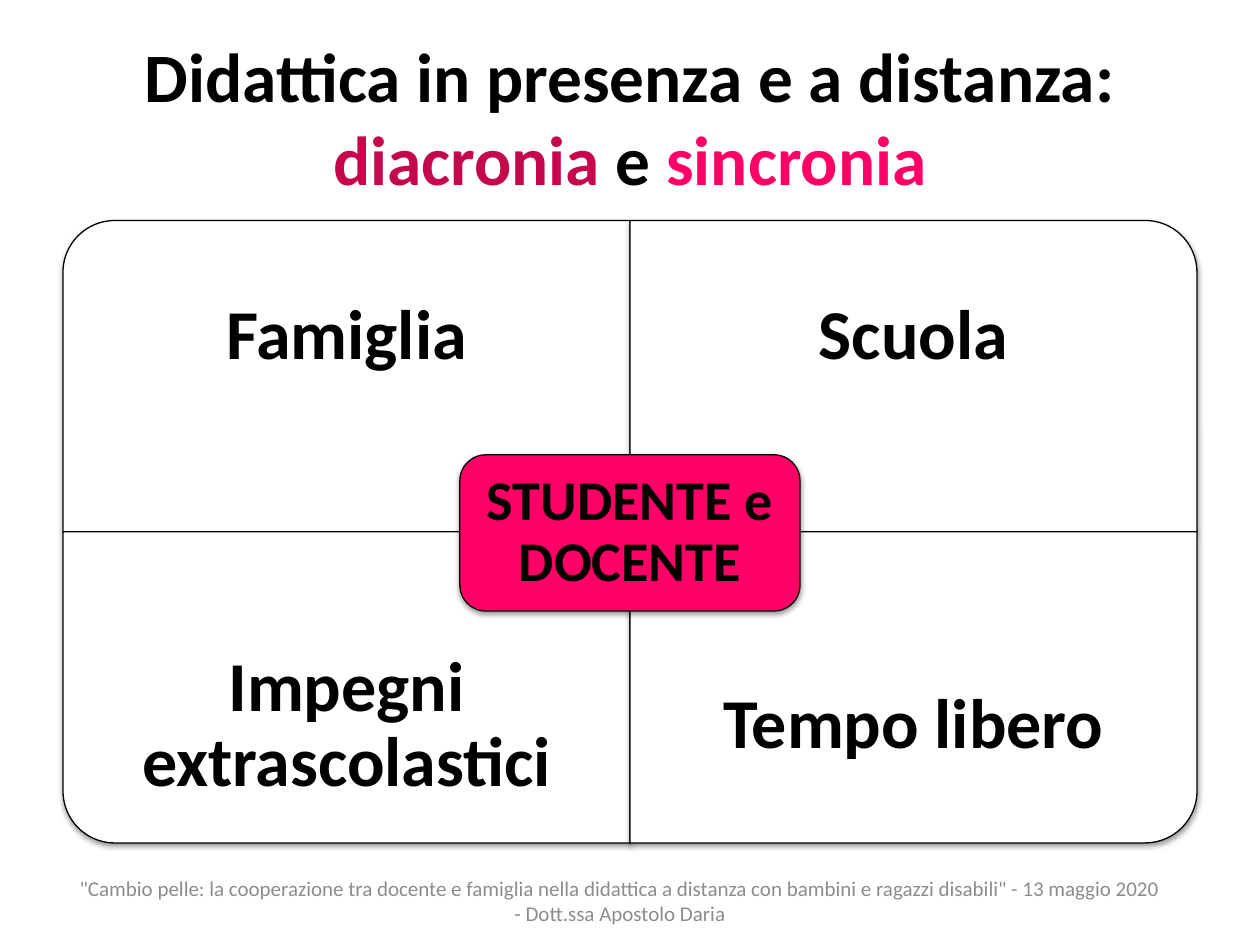
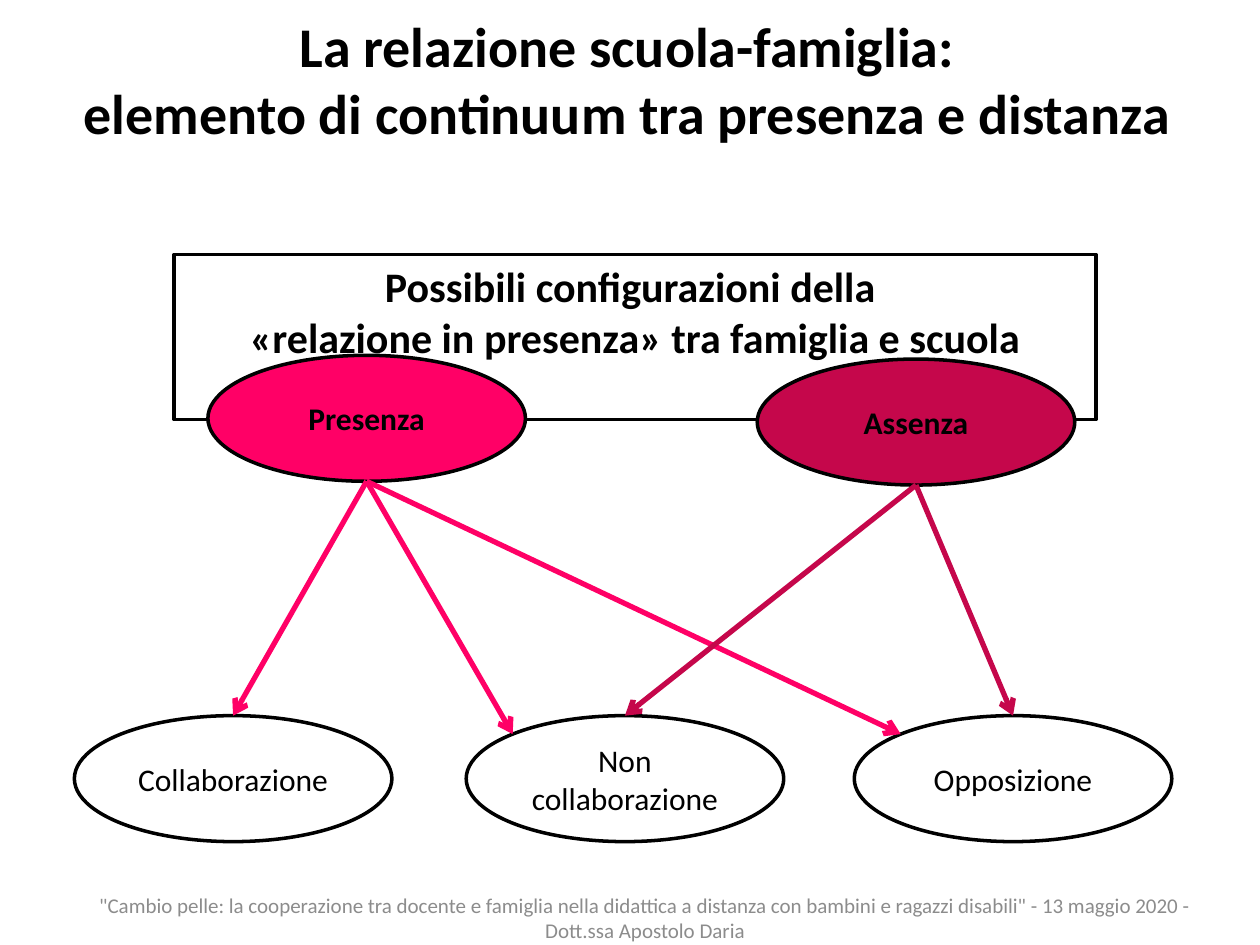
from math import cos, pi

from lxml.etree import SubElement
from pptx import Presentation
from pptx.dml.color import RGBColor
from pptx.enum.shapes import MSO_CONNECTOR, MSO_SHAPE
from pptx.enum.text import MSO_ANCHOR, PP_ALIGN
from pptx.oxml.ns import qn
from pptx.util import Inches, Pt

BLACK, WHITE, GREY = "000000", "FFFFFF", "8C8C8C"
PINK, CRIMSON = "FF0066", "C5074B"
FONT = "Calibri"
FOOTER = ('"Cambio pelle: la cooperazione tra docente e famiglia nella didattica a distanza '
          'con bambini e ragazzi disabili" - 13 maggio 2020 - Dott.ssa Apostolo Daria')

TITLE = {"size": Pt(39.6), "bold": True}
SUBTITLE = {"size": Pt(32), "bold": True}
QUADRANT = {"size": Pt(40), "bold": True}
HEADING = {"size": Pt(24), "bold": True}
CAUSE = {"size": Pt(18), "bold": True}
OUTCOME = {"size": Pt(18), "bold": False}
SMALL = {"size": Pt(12), "bold": False}


def rgb(color):
    return RGBColor.from_string(color)


def write(sp, paragraphs, fmt, anchor=MSO_ANCHOR.MIDDLE, inset=None, spacing=None):
    tf = sp.text_frame
    frame = {"word_wrap": True, "vertical_anchor": anchor}
    if inset is not None:
        for side in ("left", "top", "right", "bottom"):
            frame[f"margin_{side}"] = Inches(inset)
    for name, value in frame.items():
        setattr(tf, name, value)
    for i, runs in enumerate(paragraphs):
        p = tf.add_paragraph() if i else tf.paragraphs[0]
        p.alignment = PP_ALIGN.CENTER
        p.line_spacing = spacing
        for text, color in runs:
            r = p.add_run()
            r.text = text
            for name, value in {"name": FONT, **fmt}.items():
                setattr(r.font, name, value)
            r.font.color.rgb = rgb(color)


def add_text(s, box, paragraphs, fmt, **layout):
    sp = s.shapes.add_textbox(*map(Inches, box))
    write(sp, paragraphs, fmt, **layout)


def add_footer(s, box):
    add_text(s, box, [[(FOOTER, GREY)]], SMALL)


def add_box(s, kind, box, fill, width):
    sp = s.shapes.add_shape(kind, *map(Inches, box))
    sp.shadow.inherit = False
    if fill:
        sp.fill.solid()
        sp.fill.fore_color.rgb = rgb(fill)
    else:
        sp.fill.background()
    sp.line.color.rgb = rgb(BLACK)
    sp.line.width = Pt(width)
    return sp


def add_shadow(sp):
    effects = sp._element.spPr.find(qn("a:effectLst"))
    shadow = SubElement(effects, qn("a:outerShdw"), blurRad="40000", dist="20000",
                        dir="5400000", rotWithShape="0")
    color = SubElement(shadow, qn("a:srgbClr"), val=BLACK)
    SubElement(color, qn("a:alpha"), val="38000")


def add_quadrant(s, label, col, row, rotation):
    w, h = 4.5, 2.47
    x, y = 0.5 + col * w, 1.75 + row * h
    box = (x, y, w, h)
    if rotation % 180:
        box = (x + (w - h) / 2, y + (h - w) / 2, h, w)
    sp = add_box(s, MSO_SHAPE.ROUND_1_RECTANGLE, box, WHITE, 0.75)
    sp.rotation = rotation
    add_shadow(sp)
    add_text(s, (x, y + row * h / 4, w, h * 3 / 4), [[(label, BLACK)]], QUADRANT,
             inset=0.31, spacing=0.9)


def add_oval(s, label, x, y, fill, fmt):
    sp = add_box(s, MSO_SHAPE.OVAL, (x, y, 2.52, 1), fill, 2)
    write(sp, [[(label, BLACK)]], fmt)
    return sp


def add_arrow(s, cause, outcome, color, corner=False):
    inward = (1 - cos(pi / 4)) / 2 if corner else 0
    across = inward if corner else 0.5
    start = (cause.left + cause.width // 2, cause.top + cause.height)
    end = (outcome.left + int(outcome.width * across),
           outcome.top + int(outcome.height * inward))
    line = s.shapes.add_connector(MSO_CONNECTOR.STRAIGHT, *start, *end)
    line.line.color.rgb = rgb(color)
    line.line.width = Pt(3)
    SubElement(line.line._get_or_add_ln(), qn("a:tailEnd"), type="arrow")
    SubElement(line._element.spPr, qn("a:effectLst"))


def build_quadrants(s):
    add_text(s, (0.5, 0.3, 9, 1.25),
             [[("Didattica in presenza e a distanza: ", BLACK), ("diacronia", CRIMSON),
               (" e ", BLACK), ("sincronia", PINK)]], TITLE)
    add_footer(s, (0.51, 6.95, 8.82, 0.4))
    for label, col, row, rotation in (
            ("Famiglia", 0, 0, 270),
            ("Scuola", 1, 0, 0),
            ("Impegni extrascolastici", 0, 1, 180),
            ("Tempo libero", 1, 1, 90)):
        add_quadrant(s, label, col, row, rotation)
    centre = add_box(s, MSO_SHAPE.ROUNDED_RECTANGLE, (3.65, 3.61, 2.7, 1.24), PINK, 0.75)
    add_shadow(centre)
    write(centre, [[("STUDENTE e DOCENTE", BLACK)]], SUBTITLE, inset=0.13, spacing=0.9)


def build_relations(s):
    heading = add_box(s, MSO_SHAPE.RECTANGLE, (1.38, 2.02, 7.32, 1.31), None, 2)
    write(heading, [[("Possibili configurazioni della ", BLACK)],
                    [("«relazione in presenza» tra famiglia e scuola", BLACK)]],
          HEADING, anchor=MSO_ANCHOR.TOP)
    add_footer(s, (0.67, 7.06, 8.9, 0.44))
    presence = add_oval(s, "Presenza", 1.65, 2.82, PINK, CAUSE)
    absence = add_oval(s, "Assenza", 6.01, 2.85, CRIMSON, CAUSE)
    together, apart, against = [
        add_oval(s, label, x, 5.68, WHITE, OUTCOME)
        for label, x in (("Collaborazione", 0.59), ("Non collaborazione", 3.7),
                         ("Opposizione", 6.78))]
    add_arrow(s, presence, together, PINK)
    for outcome in (against, apart):
        add_arrow(s, presence, outcome, PINK, corner=True)
    for outcome in (apart, against):
        add_arrow(s, absence, outcome, CRIMSON)
    add_text(s, (0.03, 0, 10, 1.25),
             [[("La relazione scuola-famiglia: ", BLACK)],
              [("elemento di continuum tra presenza e distanza ", BLACK)]], SUBTITLE)


def main():
    prs = Presentation()
    prs.slide_width, prs.slide_height = Inches(10), Inches(7.5)
    for build in (build_quadrants, build_relations):
        build(prs.slides.add_slide(prs.slide_layouts[6]))
    prs.save("out.pptx")


if __name__ == "__main__":
    main()
